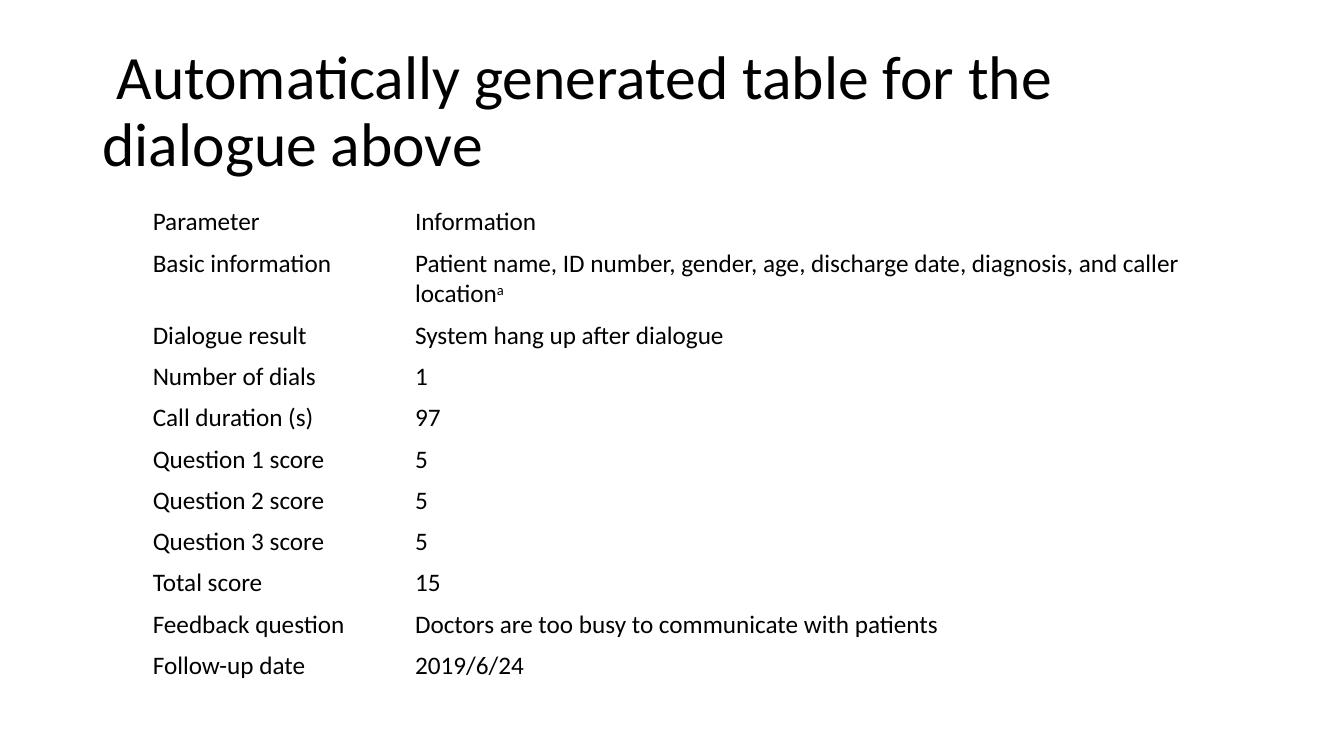
from pptx import Presentation
from pptx.dml.color import RGBColor
from pptx.enum.text import MSO_ANCHOR, MSO_AUTO_SIZE, PP_ALIGN
from pptx.util import Cm, Pt

BLACK = RGBColor(0x00, 0x00, 0x00)

ROWS = [
    ("Parameter", "Information"),
    ("Basic information",
     "Patient name, ID number, gender, age, discharge date, diagnosis, and caller location"),
    ("Dialogue result", "System hang up after dialogue"),
    ("Number of dials", "1"),
    ("Call duration (s)", "97"),
    ("Question 1 score", "5"),
    ("Question 2 score", "5"),
    ("Question 3 score", "5"),
    ("Total score", "15"),
    ("Feedback question", "Doctors are too busy to communicate with patients"),
    ("Follow-up date", "2019/6/24"),
]
BASIC_ROW = 1


class SlideBuilder:
    font = "Calibri"
    color = BLACK
    inset = Cm(0.13)

    def __init__(self, prs):
        self.s = prs.slides.add_slide(prs.slide_layouts[5])

    def style(self, p, size):
        p.alignment = PP_ALIGN.LEFT
        p.font.name = self.font
        p.font.size = Pt(size)
        p.font.color.rgb = self.color

    def title(self, text, left, top, width, height):
        sp = self.s.shapes.title
        sp.left, sp.top, sp.width, sp.height = Cm(left), Cm(top), Cm(width), Cm(height)
        tf = sp.text_frame
        tf.text = text
        tf.word_wrap = True
        tf.auto_size = MSO_AUTO_SIZE.NONE
        tf.vertical_anchor = MSO_ANCHOR.MIDDLE
        p = tf.paragraphs[0]
        self.style(p, 44)
        p.line_spacing = 0.9

    def table(self, rows, left, top, widths, row_height):
        frame = self.s.shapes.add_table(len(rows), len(widths), Cm(left), Cm(top),
                                        Cm(sum(widths)), Cm(row_height * len(rows)))
        table = frame.table
        table.first_row = False
        table.horz_banding = False
        for column, width in zip(table.columns, widths):
            column.width = Cm(width)
        for i, row in enumerate(rows):
            table.rows[i].height = Cm(row_height)
            for j, text in enumerate(row):
                self.cell(table.cell(i, j), text)
        return table

    def cell(self, cell, text):
        cell.fill.background()
        cell.margin_left = cell.margin_right = self.inset
        cell.margin_top = cell.margin_bottom = self.inset
        cell.text = text
        self.style(cell.text_frame.paragraphs[0], 18)

    def superscript(self, cell, text):
        r = cell.text_frame.paragraphs[0].add_run()
        r.text = text
        r.font._element.set("baseline", "30000")


def main():
    prs = Presentation()
    prs.slide_width, prs.slide_height = Cm(33.87), Cm(19.05)
    builder = SlideBuilder(prs)
    builder.title(" Automatically generated table for the dialogue above",
                  2.33, 1.01, 29.21, 3.68)
    table = builder.table(ROWS, 3.72, 5.08, [6.61, 19.84], 1.04)
    table.rows[BASIC_ROW].height = Cm(1.82)
    builder.superscript(table.cell(BASIC_ROW, 1), "a")
    prs.save("out.pptx")


if __name__ == "__main__":
    main()
